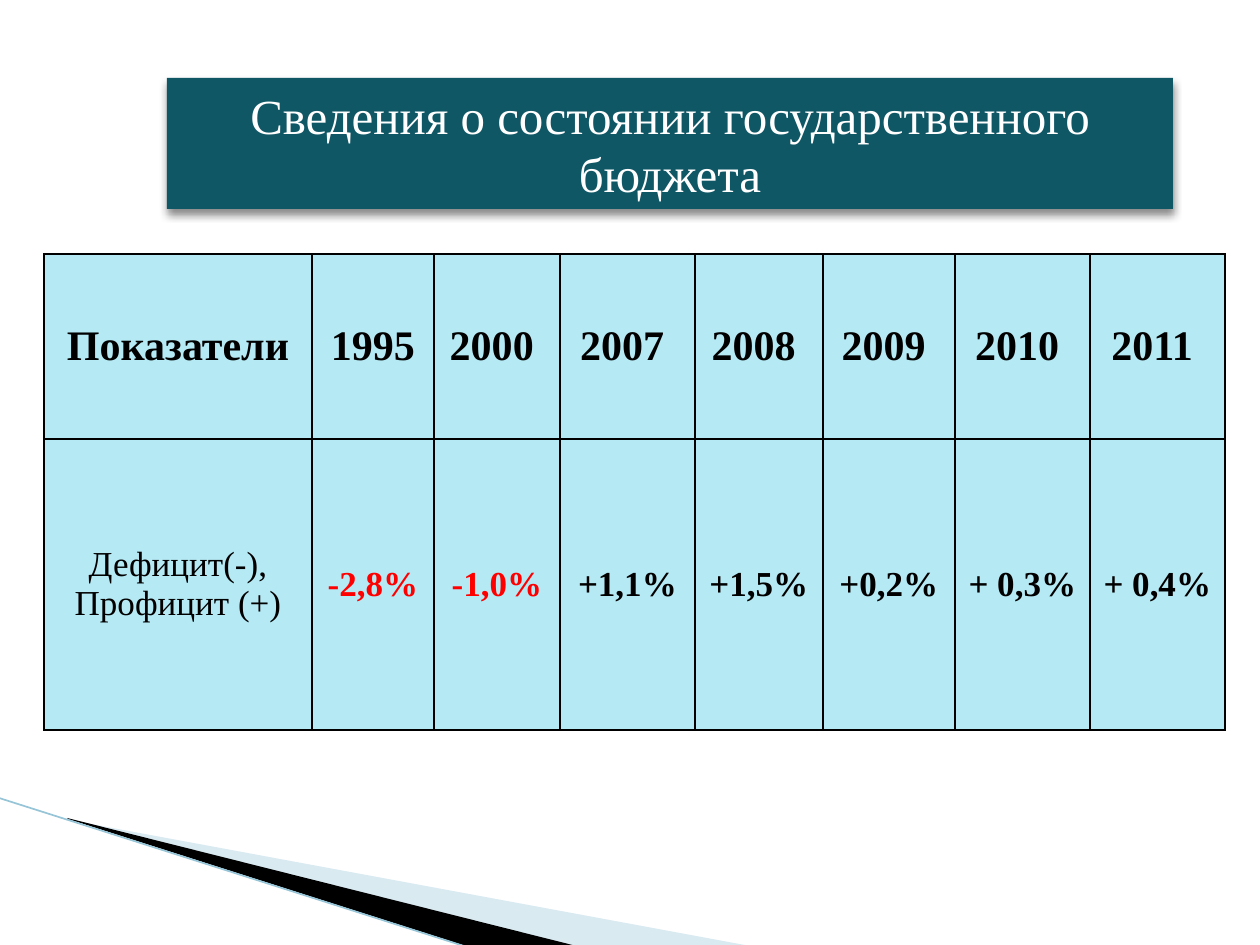
import pptx
import pptx.dml.color
import pptx.enum.shapes
import pptx.enum.text
import pptx.oxml
import pptx.oxml.ns
import pptx.util

RGBColor = pptx.dml.color.RGBColor
BLACK = RGBColor(0x00, 0x00, 0x00)
WHITE = RGBColor(0xFF, 0xFF, 0xFF)
RED = RGBColor(0xFF, 0x00, 0x00)
TEAL = RGBColor(0x10, 0x57, 0x66)
PALE_CYAN = RGBColor(0xB5, 0xE9, 0xF4)
MIST_BLUE = RGBColor(0xA0, 0xCB, 0xDC)
LINE_BLUE = RGBColor(0x97, 0xC5, 0xD8)

NAMESPACE = pptx.oxml.ns.nsdecls("a")
EMU_PER_PX = 914400 / 126
COLUMN_WIDTHS = [268, 122, 126, 135, 128, 132, 135, 135]
ROW_HEIGHTS = [185, 291]
HEADINGS = ["Показатели", "1995", "2000 ", "2007 ", "2008 ", "2009 ", "2010 ", "2011 "]
ROW_LABEL = ["Дефицит(-),", "Профицит (+)"]
BALANCES = ["-2,8%", "-1,0%", "+1,1%", "+1,5%", "+0,2%", "+ 0,3%", "+ 0,4%"]


def px(length):
    return pptx.util.Emu(round(length * EMU_PER_PX))


def add_xml(parent, markup):
    parent.append(pptx.oxml.parse_xml(markup))


class SlideBuilder:
    font_name = "Times New Roman"
    hanging = 48

    def __init__(self, page):
        self.page = page

    def add_span(self, para, text, size, color, bold=False):
        para.alignment = pptx.enum.text.PP_ALIGN.CENTER
        span = para.add_run()
        span.text = text
        span.font.name = self.font_name
        span.font.size = pptx.util.Pt(size)
        span.font.bold = bold
        span.font.color.rgb = color

    def wedge(self, points, color, opacity=100):
        builder = self.page.shapes.build_freeform(*points[0], scale=EMU_PER_PX)
        builder.add_line_segments(points[1:], close=True)
        shape = builder.convert_to_shape()
        shape.shadow.inherit = False
        shape.line.fill.background()
        shape.fill.solid()
        shape.fill.fore_color.rgb = color
        if opacity < 100:
            tint = shape._element.spPr.find(".//" + pptx.oxml.ns.qn("a:srgbClr"))
            add_xml(tint, f'<a:alpha {NAMESPACE} val="{opacity * 1000}"/>')

    def line(self, start, end, color, width):
        connector = self.page.shapes.add_connector(
            pptx.enum.shapes.MSO_CONNECTOR.STRAIGHT, *map(px, start + end))
        connector.line.color.rgb = color
        connector.line.width = pptx.util.Pt(width)
        add_xml(connector._element.spPr, f"<a:effectLst {NAMESPACE}/>")

    def title(self, text, left, top, width, height):
        box = self.page.shapes.add_shape(
            pptx.enum.shapes.MSO_SHAPE.RECTANGLE, *map(px, (left, top, width, height)))
        box.fill.solid()
        box.fill.fore_color.rgb = TEAL
        box.line.fill.background()
        add_xml(box._element.spPr, f"""
            <a:effectLst {NAMESPACE}>
              <a:outerShdw blurRad="63500" dist="38100" dir="5400000" rotWithShape="0">
                <a:srgbClr val="000000"><a:alpha val="45000"/></a:srgbClr>
              </a:outerShdw>
            </a:effectLst>""".strip())
        frame = box.text_frame
        frame.word_wrap = True
        frame.auto_size = pptx.enum.text.MSO_AUTO_SIZE.SHAPE_TO_FIT_TEXT
        frame.vertical_anchor = pptx.enum.text.MSO_ANCHOR.BOTTOM
        self.add_span(frame.paragraphs[0], text, 28, WHITE)

    def table(self, left, top, widths, heights):
        frame = self.page.shapes.add_table(
            len(heights), len(widths), *map(px, (left, top, sum(widths), sum(heights))))
        table = frame.table
        for column, width in zip(table.columns, widths):
            column.width = px(width)
        for row, height in zip(table.rows, heights):
            row.height = px(height)
        return table

    def cell(self, cell, lines, size, color=BLACK, bold=True):
        properties = cell._tc.get_or_add_tcPr()
        for side in ("lnL", "lnR", "lnT", "lnB"):
            add_xml(properties, f'<a:{side} {NAMESPACE} w="12700"><a:solidFill>'
                                f'<a:srgbClr val="{BLACK}"/></a:solidFill></a:{side}>')
        cell.fill.solid()
        cell.fill.fore_color.rgb = PALE_CYAN
        cell.vertical_anchor = pptx.enum.text.MSO_ANCHOR.MIDDLE
        frame = cell.text_frame
        for index, text in enumerate(lines):
            para = frame.add_paragraph() if index else frame.paragraphs[0]
            indents = para._p.get_or_add_pPr()
            indents.set("marL", str(px(self.hanging)))
            indents.set("indent", str(-px(self.hanging)))
            self.add_span(para, text, size, color, bold)


def main():
    deck = pptx.Presentation()
    deck.slide_width, deck.slide_height = px(1260), px(945)
    slide = SlideBuilder(deck.slides.add_slide(deck.slide_layouts[6]))

    slide.wedge([(69, 820), (750, 946), (575, 946), (69, 819)], MIST_BLUE, opacity=40)
    slide.wedge([(67, 818), (576, 946), (469, 947), (68, 819)], BLACK)
    slide.line((-1, 798), (467, 947), LINE_BLUE, 0.95)

    table = slide.table(44, 254, COLUMN_WIDTHS, ROW_HEIGHTS)
    for column, heading in enumerate(HEADINGS):
        slide.cell(table.cell(0, column), [heading], 24)
    slide.cell(table.cell(1, 0), ROW_LABEL, 20, bold=False)
    for column, balance in enumerate(BALANCES, start=1):
        color = RED if balance.startswith("-") else BLACK
        slide.cell(table.cell(1, column), [balance], 20, color)

    slide.title("Сведения о состоянии государственного бюджета", 167, 78, 1006, 131)
    deck.save("out.pptx")


if __name__ == "__main__":
    main()
